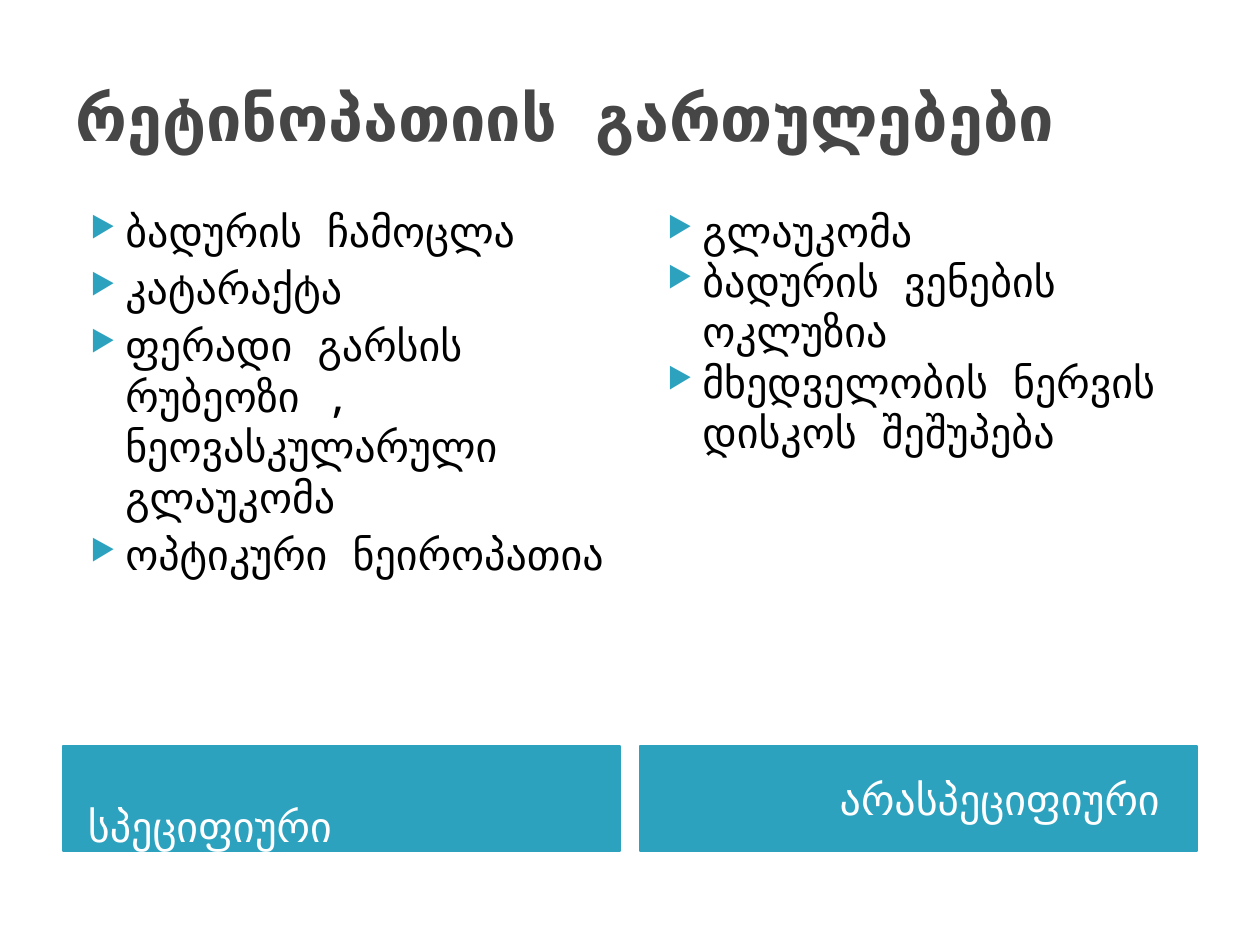
from lxml import etree
from pptx import Presentation
from pptx import util as u
from pptx.dml.color import RGBColor
from pptx.enum import shapes, text
from pptx.oxml.ns import qn

SCALE = 914400 / 126
FONT = "Noto Sans Mono"
TEAL = RGBColor(0x2D, 0xA2, 0xBF)
GREY = RGBColor(0x46, 0x46, 0x46)
BLACK = RGBColor(0, 0, 0)
WHITE = RGBColor(255, 255, 255)

LEFT, WIDE, STEP = 63, 557, 577
COLS = [
    ("სპეციფიური", 4,
     ["ბადურის ჩამოცლა", "კატარაქტა",
      "ფერადი გარსის რუბეოზი , ნეოვასკულარული გლაუკომა",
      "ოპტიკური ნეიროპათია"]),
    ("არასპეციფიური", 0,
     ["გლაუკომა", "ბადურის ვენების ოკლუზია",
      "მხედველობის ნერვის დისკოს შეშუპება"]),
]


def px(n):
    return u.Emu(round(n * SCALE))


def style(para, size, color, bold=False):
    font = para.font
    font.name, font.size, font.bold = FONT, u.Pt(size), bold
    font.color.rgb = color


def bullet(para):
    """Give the paragraph a hanging teal triangle."""
    props = para._p.get_or_add_pPr()
    props.set("marL", str(px(50)))
    props.set("indent", str(-px(35)))
    color = etree.SubElement(props, qn("a:buClr"))
    etree.SubElement(color, qn("a:srgbClr"), val=str(TEAL))
    etree.SubElement(props, qn("a:buSzPct"), val="68000")
    etree.SubElement(props, qn("a:buChar"), char="▶")


def add_text(slide, box):
    frame = slide.shapes.add_textbox(*map(px, box)).text_frame
    frame.word_wrap = True
    return frame


def add_title(slide, box, words):
    frame = add_text(slide, box)
    frame.vertical_anchor = text.MSO_ANCHOR.MIDDLE
    para = frame.paragraphs[0]
    para.text = words
    style(para, 36, GREY, True)


def add_list(slide, box, items, gap):
    frame = add_text(slide, box)
    for i, item in enumerate(items):
        para = frame.add_paragraph() if i else frame.paragraphs[0]
        para.text = item
        bullet(para)
        para.space_before = u.Pt(gap if i else 0)
        style(para, 24, BLACK)


def add_label(slide, box, words, right):
    """Draw a banner: text low on the left, or centred in height on the right."""
    bar = slide.shapes.add_shape(shapes.MSO_SHAPE.RECTANGLE, *map(px, box))
    bar.shadow.inherit = False
    bar.fill.solid()
    bar.fill.fore_color.rgb = TEAL
    bar.line.color.rgb = TEAL
    bar.line.width = u.Pt(0.75)
    frame = bar.text_frame
    frame.word_wrap = True
    frame.margin_left, frame.margin_right = px(25), px(37)
    frame.margin_top = frame.margin_bottom = 0
    para = frame.paragraphs[0]
    para.text = words
    if right:
        frame.vertical_anchor = text.MSO_ANCHOR.MIDDLE
        para.alignment = text.PP_ALIGN.RIGHT
    else:
        frame.vertical_anchor = text.MSO_ANCHOR.BOTTOM
        para.alignment = text.PP_ALIGN.LEFT
    style(para, 24, WHITE)


def main():
    deck = Presentation()
    deck.slide_width, deck.slide_height = u.Inches(10), u.Inches(7.5)
    slide = deck.slides.add_slide(deck.slide_layouts[6])
    add_title(slide, (LEFT, 38, 1134, 157), "რეტინოპათიის გართულებები")
    for i, (label, gap, items) in enumerate(COLS):
        x = LEFT + i * STEP
        add_label(slide, (x, 746, WIDE, 105), label, i == 1)
        add_list(slide, (x, 199, WIDE, 543), items, gap)
    deck.save("out.pptx")


if __name__ == "__main__":
    main()
